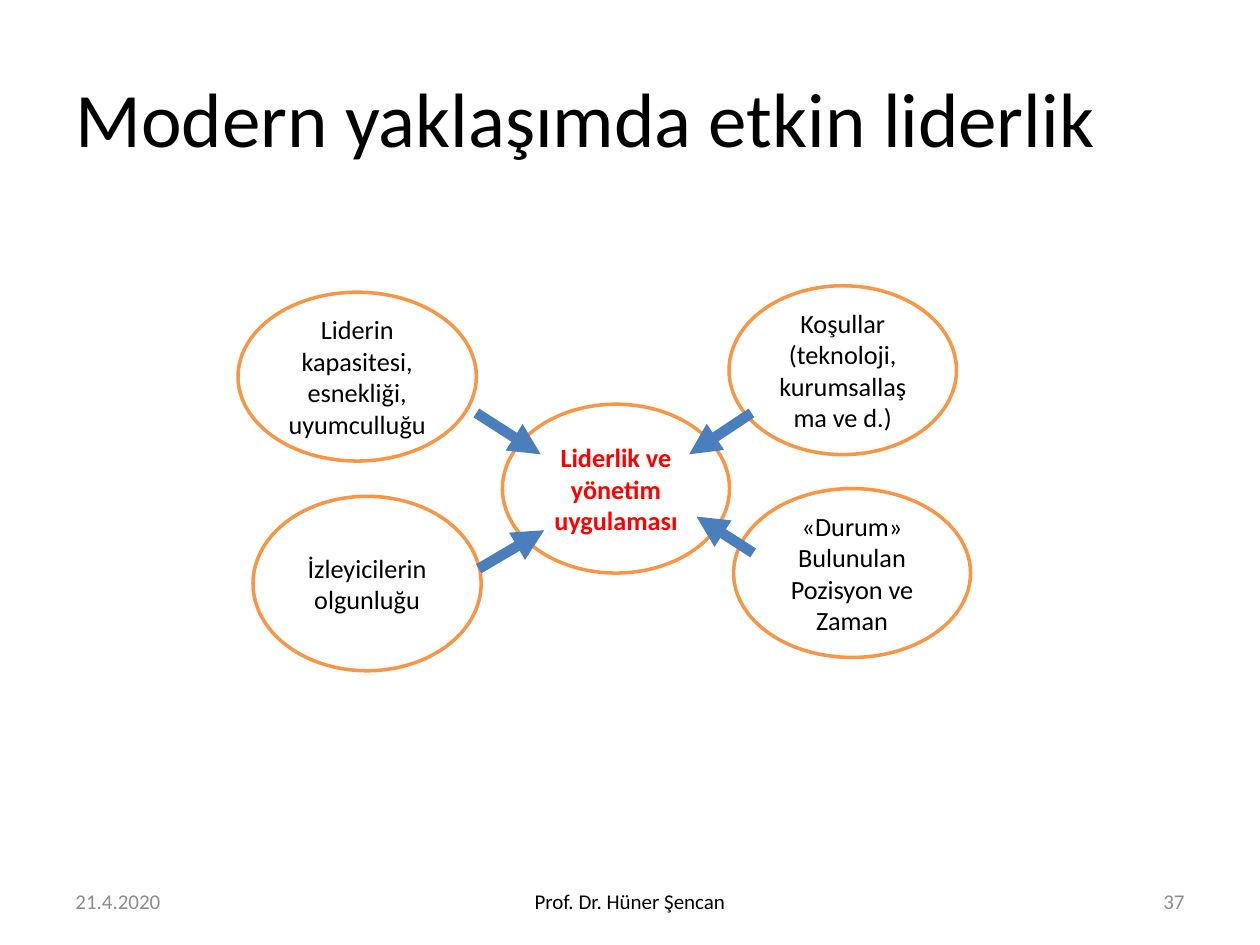
from dataclasses import dataclass

from lxml import etree
from pptx import Presentation
from pptx.dml.color import RGBColor
from pptx.enum import shapes, text
from pptx.oxml import ns
from pptx.util import Pt


@dataclass(frozen=True)
class Theme:
    face: str = "Calibri"
    ink: str = "000000"
    gray: str = "8C8C8C"
    red: str = "FF0000"
    paper: str = "FFFFFF"
    rim: str = "F79646"
    arrow: str = "4B7EBC"
    head: int = 44
    body: int = 15
    foot: int = 12


THEME = Theme()
ALIGN = text.PP_ALIGN


def color(code):
    return RGBColor.from_string(code)


def write(shape, words, size, ink, align, bold=False):
    """Fill a shape with one paragraph per line of words."""
    frame = shape.text_frame
    frame.word_wrap = True
    frame.vertical_anchor = text.MSO_ANCHOR.MIDDLE
    frame.text = words
    style = {"name": THEME.face, "size": Pt(size), "bold": bold}
    for para in frame.paragraphs:
        para.alignment = align
        for key, value in style.items():
            setattr(para.font, key, value)
        para.font.color.rgb = color(ink)


def label(slide, box, words, size, ink, align):
    item = slide.shapes.add_textbox(*map(Pt, box))
    write(item, words, size, ink, align)


def oval(slide, box, words, ink=THEME.ink, bold=False):
    item = slide.shapes.add_shape(shapes.MSO_SHAPE.OVAL, *map(Pt, box))
    item.shadow.inherit = False
    item.fill.solid()
    item.fill.fore_color.rgb = color(THEME.paper)
    item.line.color.rgb = color(THEME.rim)
    item.line.width = Pt(2)
    write(item, words, THEME.body, ink, ALIGN.CENTER, bold)


def arrow(slide, start, end):
    item = slide.shapes.add_connector(
        shapes.MSO_CONNECTOR.STRAIGHT, *map(Pt, start + end))
    item.line.color.rgb = color(THEME.arrow)
    item.line.width = Pt(6)
    tip = etree.SubElement(item.line._get_or_add_ln(), ns.qn("a:tailEnd"))
    tip.set("type", "triangle")
    etree.SubElement(item._element.spPr, ns.qn("a:effectLst"))


def main():
    deck = Presentation()
    deck.slide_width, deck.slide_height = Pt(720), Pt(540)
    slide = deck.slides.add_slide(deck.slide_layouts[6])

    # Title
    label(slide, (36, 21.6, 648, 90), "Modern yaklaşımda etkin liderlik",
          THEME.head, THEME.ink, ALIGN.LEFT)

    # Footer
    for left, width, words, ink, align in (
        (36, 168, "21.4.2020", THEME.gray, ALIGN.LEFT),
        (246, 228, "Prof. Dr. Hüner Şencan", THEME.ink, ALIGN.CENTER),
        (516, 168, "37", THEME.gray, ALIGN.RIGHT),
    ):
        label(slide, (left, 500.5, width, 28.75), words, THEME.foot, ink, align)

    # Core idea and the four factors around it
    oval(slide, (287.1, 231, 129.8, 96.5), "Liderlik ve yönetim uygulaması",
         THEME.red, True)
    for box, words in (
        ((144.6, 283.6, 130.4, 99.7), "İzleyicilerin olgunluğu"),
        ((419.2, 279.2, 135.4, 96.5), "«Durum»\nBulunulan Pozisyon ve Zaman"),
        ((416.6, 163.3, 130, 96.5), "Koşullar (teknoloji, kurumsallaşma ve d.)"),
        ((136, 167, 136.2, 96.5), "Liderin kapasitesi, esnekliği, uyumculluğu"),
    ):
        oval(slide, box, words)

    # Arrows toward the core
    for start, end in (
        ((272.2, 236), (309, 259.6)),
        ((429.4, 236), (393.8, 259.6)),
        ((273.6, 325), (311, 303)),
        ((430.4, 316), (398, 295.2)),
    ):
        arrow(slide, start, end)

    deck.save("out.pptx")


if __name__ == "__main__":
    main()
